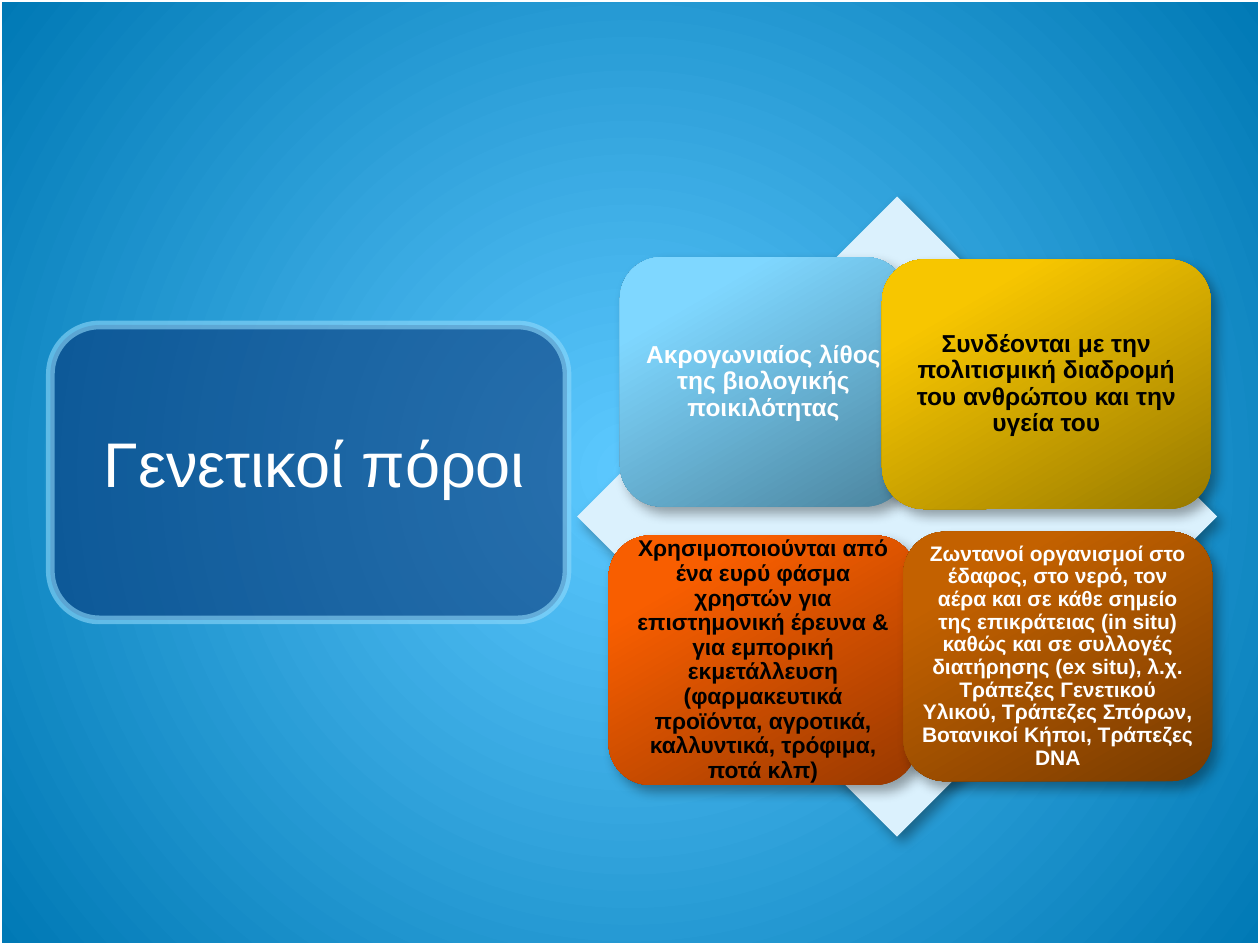
from dataclasses import dataclass

from lxml.etree import SubElement
from pptx import Presentation
from pptx.dml.color import RGBColor
from pptx.enum.shapes import MSO_SHAPE
from pptx.enum.text import MSO_ANCHOR, PP_ALIGN
from pptx.oxml import parse_xml
from pptx.oxml.ns import nsdecls, qn
from pptx.util import Inches, Pt


@dataclass(frozen=True)
class Theme:
    """Colours, type sizes and line widths of the slide."""

    font: str = "Arial"
    white: str = "FFFFFF"
    black: str = "000000"
    backdrop: tuple = ((0, "5DC9FF"), (100, "0079B5"))
    panel: str = "073779"
    panel_edge: str = "8FD9FB"
    panel_opacity: int = 60
    diamond: str = "DBF1FD"
    blue: tuple = ((0, "4B849E"), (80, "7FD7FF"), (100, "81D7FF"))
    yellow: tuple = ((0, "977900"), (80, "F7C600"), (100, "F8C700"))
    orange: tuple = ((0, "983900"), (80, "F85E00"), (100, "F95E00"))
    brown: tuple = ((0, "773B00"), (80, "C36100"), (100, "C46100"))
    title_size: int = 36
    large: int = 14
    medium: int = 13
    small: int = 12


@dataclass(frozen=True)
class Box:
    """A rectangle in grid units of a tenth of an inch."""

    column: float
    row: float
    columns: float
    rows: float

    def place(self, column, row, columns, rows):
        """Return a box placed relative to this one."""
        return Box(self.column + column, self.row + row, columns, rows)

    def lengths(self):
        """Return left, top, width and height for a shape."""
        return [Inches(units / 10) for units in (self.column, self.row, self.columns, self.rows)]


THEME = Theme()
PAGE = Box(0, 0, 100, 75)
CARD_ANGLE = 240
CARDS = [
    ((3.4, 4.8, 22.8, 19.8), THEME.blue, THEME.white, THEME.large, 0.06,
     "Ακρογωνιαίος λίθος της βιολογικής ποικιλότητας"),
    ((24.2, 5, 26.1, 19.8), THEME.yellow, THEME.black, THEME.large, 0.06,
     "Συνδέονται με την πολιτισμική διαδρομή του ανθρώπου και την υγεία του"),
    ((2.5, 26.9, 24.5, 19.8), THEME.orange, THEME.black, THEME.medium, 0.05,
     "Χρησιμοποιούνται από ένα ευρύ φάσμα χρηστών για επιστημονική έρευνα & "
     "για εμπορική εκμετάλλευση (φαρμακευτικά προϊόντα, αγροτικά, καλλυντικά, "
     "τρόφιμα, ποτά κλπ)"),
    ((25.9, 26.6, 24.5, 19.8), THEME.brown, THEME.white, THEME.small, 0.05,
     "Ζωντανοί οργανισμοί στο έδαφος, στο νερό, τον αέρα και σε κάθε σημείο "
     "της επικράτειας (in situ) καθώς και σε συλλογές διατήρησης (ex situ), λ.χ. "
     "Τράπεζες Γενετικού Υλικού, Τράπεζες Σπόρων, Βοτανικοί Κήποι, Τράπεζες DNA"),
]


def set_gradient(fill, properties, stops, direction):
    """Give a fill the stops and direction of a gradient."""
    fill.gradient()
    stop_list = "".join(
        f'<a:gs pos="{position * 1000}"><a:srgbClr val="{color}"/></a:gs>'
        for position, color in stops
    )
    gradient = parse_xml(
        f'<a:gradFill {nsdecls("a")} rotWithShape="1">'
        f"<a:gsLst>{stop_list}</a:gsLst>{direction}</a:gradFill>"
    )
    properties.replace(properties.find(qn("a:gradFill")), gradient)


def set_opacity(properties, percent):
    """Make every solid colour under the properties translucent."""
    for color in properties.iter(qn("a:srgbClr")):
        SubElement(color, qn("a:alpha")).set("val", str(percent * 1000))


def add_plain_shape(slide, kind, box):
    """Add a shape without fill, line or shadow."""
    shape = slide.shapes.add_shape(kind, *box.lengths())
    shape.shadow.inherit = False
    shape.fill.background()
    shape.line.fill.background()
    return shape


def add_outline(shape, color, width):
    """Draw the edge of a shape."""
    shape.line.color.rgb = RGBColor.from_string(color)
    shape.line.width = Pt(width)


def add_shadow(shape):
    """Cast a soft shadow to the lower right."""
    effects = shape.element.spPr.find(qn("a:effectLst"))
    effects.append(parse_xml(
        f'<a:outerShdw {nsdecls("a")} blurRad="{Pt(7)}" dist="{Pt(5)}" dir="3000000" '
        f'rotWithShape="0"><a:srgbClr val="{THEME.black}"><a:alpha val="35000"/>'
        "</a:srgbClr></a:outerShdw>"
    ))


def write_text(shape, text, size, color, bold=False):
    """Write one centred paragraph in a shape."""
    frame = shape.text_frame
    frame.text = text
    frame.word_wrap = True
    frame.vertical_anchor = MSO_ANCHOR.MIDDLE
    paragraph = frame.paragraphs[0]
    paragraph.alignment = PP_ALIGN.CENTER
    font = paragraph.runs[0].font
    font.name = THEME.font
    font.size = Pt(size)
    font.bold = bold
    font.color.rgb = RGBColor.from_string(color)
    return frame


def draw_backdrop(slide, box):
    """Draw the radial background and its white frame."""
    fill = slide.background.fill
    properties = slide.element.find(".//" + qn("p:bgPr"))
    set_gradient(
        fill, properties, THEME.backdrop,
        '<a:path path="circle"><a:fillToRect l="50000" t="50000" r="50000" b="50000"/></a:path>',
    )
    add_outline(add_plain_shape(slide, MSO_SHAPE.RECTANGLE, box), THEME.white, 2)


def draw_title(slide, box):
    """Draw the translucent panel and the title over it."""
    panel = add_plain_shape(slide, MSO_SHAPE.ROUNDED_RECTANGLE, box)
    panel.fill.solid()
    panel.fill.fore_color.rgb = RGBColor.from_string(THEME.panel)
    add_outline(panel, THEME.panel_edge, 5)
    set_opacity(panel.element.spPr, THEME.panel_opacity)
    title = slide.shapes.add_textbox(*box.place(-0.7, 0.9, 43.3, 20).lengths())
    write_text(title, "Γενετικοί πόροι", THEME.title_size, THEME.white)


def draw_card(slide, box, stops, color, size, inset, text):
    """Draw one shaded card with its statement."""
    card = add_plain_shape(slide, MSO_SHAPE.ROUNDED_RECTANGLE, box)
    set_gradient(card.fill, card.element.spPr, stops,
                 f'<a:lin ang="{CARD_ANGLE * 60000}" scaled="0"/>')
    add_shadow(card)
    frame = write_text(card, text, size, color, bold=True)
    frame.margin_left = frame.margin_right = Inches(inset)
    frame.margin_top = frame.margin_bottom = Inches(inset)
    frame.paragraphs[0].line_spacing = 0.9


def draw_matrix(slide, box):
    """Draw the diamond and the four cards on it."""
    diamond = add_plain_shape(slide, MSO_SHAPE.DIAMOND, box)
    diamond.fill.solid()
    diamond.fill.fore_color.rgb = RGBColor.from_string(THEME.diamond)
    add_shadow(diamond)
    for position, *content in CARDS:
        draw_card(slide, box.place(*position), *content)


def main():
    """Build and save the presentation."""
    presentation = Presentation()
    presentation.slide_width, presentation.slide_height = PAGE.lengths()[2:]
    slide = presentation.slides.add_slide(presentation.slide_layouts[6])
    draw_backdrop(slide, PAGE)
    draw_title(slide, PAGE.place(4, 25.8, 41, 23.4))
    draw_matrix(slide, PAGE.place(45.8, 15.6, 50.8, 50.8))
    presentation.save("out.pptx")


if __name__ == "__main__":
    main()
